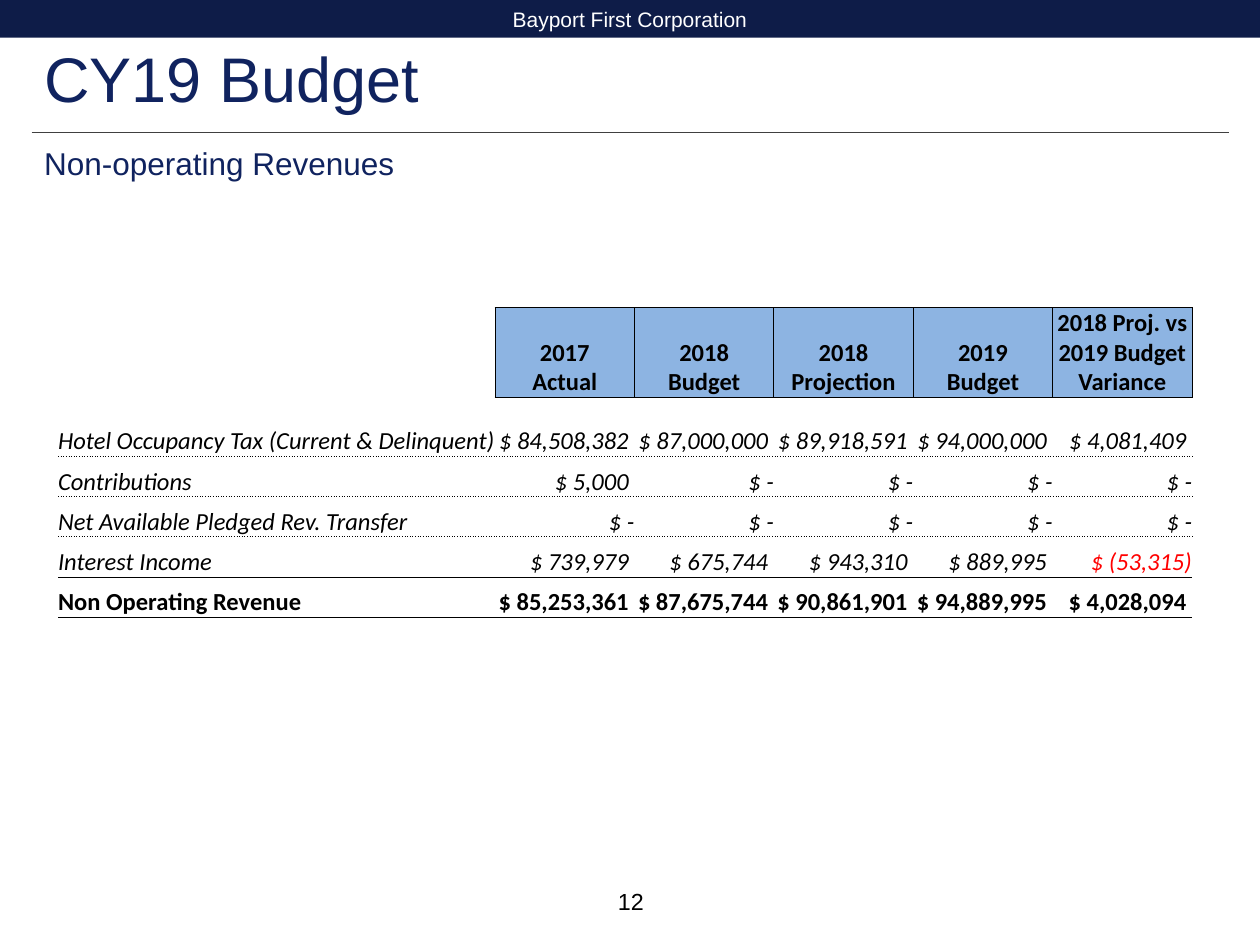
from lxml.etree import SubElement
from pptx import Presentation
from pptx.dml.color import RGBColor
from pptx.enum.shapes import MSO_CONNECTOR as Connector, MSO_SHAPE as Shape
from pptx.enum.text import MSO_ANCHOR as Anchor, MSO_AUTO_SIZE as AutoSize, PP_ALIGN as Align
from pptx.oxml.ns import qn
from pptx.util import Cm, Pt

NAVY, BANNER, BLACK, WHITE = "10235F", "0E1C48", "000000", "FFFFFF"
HEADER_BLUE, RULE_GREY, RED = "8DB4E2", "404040", "FF0000"
NO_STYLE = "{2D5ABB26-0587-4C30-8999-92F81FD0307C}"

HEADERS = ["", "2017\nActual", "2018\nBudget", "2018\nProjection", "2019\nBudget",
           "2018 Proj. vs 2019 Budget Variance"]
REVENUES = [
    ["Hotel Occupancy Tax (Current & Delinquent)", "$ 84,508,382 ", "$ 87,000,000 ",
     "$ 89,918,591 ", "$ 94,000,000 ", "$ 4,081,409 "],
    ["Contributions", "$ 5,000 ", "$ -", "$ -", "$ -", "$ -"],
    ["Net Available Pledged Rev. Transfer", "$ -", "$ -", "$ -", "$ -", "$ -"],
    ["Interest Income", "$ 739,979 ", "$ 675,744 ", "$ 943,310 ", "$ 889,995 ", "$ (53,315)"],
    ["Non Operating Revenue", "$ 85,253,361 ", "$ 87,675,744 ", "$ 90,861,901 ",
     "$ 94,889,995 ", "$ 4,028,094 "],
]
COLUMN_WIDTHS = [8.81] + [2.81] * 5
ROW_HEIGHTS = [1.81, 1.19] + [0.81] * 4


def color(value):
    return RGBColor.from_string(value)


class BudgetSlide:
    """Holds the text style and the current page."""

    font_name = "Arial"
    table_font = "Calibri"

    def __init__(self, deck):
        self.page = deck.slides.add_slide(deck.slide_layouts[5])

    def fill_text(self, frame, text, align=Align.LEFT, ink=BLACK, **font):
        values = {"name": self.font_name, "bold": False, "italic": False, **font}
        for number, line in enumerate(text.split("\n")):
            para = frame.add_paragraph() if number else frame.paragraphs[0]
            para.alignment = align
            span = para.add_run()
            span.text = line
            for key, value in values.items():
                setattr(span.font, key, value)
            span.font.color.rgb = color(ink)

    def place(self, box, left, top, width, height):
        box.left, box.top, box.width, box.height = map(Cm, (left, top, width, height))

    def title(self, text, *area):
        box = self.page.shapes.title
        self.place(box, *area)
        frame = box.text_frame
        frame.auto_size = AutoSize.NONE
        frame.word_wrap = False
        frame.vertical_anchor = Anchor.TOP
        self.fill_text(frame, text, ink=NAVY, size=Pt(36))

    def text(self, text, *area, anchor=Anchor.TOP, **style):
        frame = self.page.shapes.add_textbox(*map(Cm, area)).text_frame
        frame.word_wrap = True
        frame.vertical_anchor = anchor
        self.fill_text(frame, text, **style)

    def banner(self, text, *area):
        box = self.page.shapes.add_shape(Shape.RECTANGLE, *map(Cm, area))
        box.shadow.inherit = False
        box.fill.solid()
        box.fill.fore_color.rgb = color(BANNER)
        box.line.fill.background()
        box.text_frame.vertical_anchor = Anchor.MIDDLE
        self.fill_text(box.text_frame, text, Align.CENTER, WHITE, size=Pt(12))

    def rule(self, *ends):
        line = self.page.shapes.add_connector(Connector.STRAIGHT, *map(Cm, ends))
        line.line.color.rgb = color(RULE_GREY)
        line.line.width = Pt(0.5)
        SubElement(line._element.spPr, qn("a:effectLst"))

    def borders(self, cell, **dashes):
        properties = cell._tc.get_or_add_tcPr()
        for side in "LRTB":
            if side in dashes:
                line = SubElement(properties, qn(f"a:ln{side}"), w=str(Pt(0.5)))
                fill = SubElement(line, qn("a:solidFill"))
                SubElement(fill, qn("a:srgbClr"), val=BLACK)
                SubElement(line, qn("a:prstDash"), val=dashes[side])

    def cell(self, cell, text, align, fill=None, **font):
        cell.vertical_anchor = Anchor.BOTTOM
        for side in ("left", "right", "top", "bottom"):
            setattr(cell, f"margin_{side}", 0)
        if fill:
            cell.fill.solid()
            cell.fill.fore_color.rgb = color(fill)
        else:
            cell.fill.background()
        if text:
            self.fill_text(cell.text_frame, text, align, name=self.table_font,
                           size=Pt(14), **font)

    def table(self, left, top):
        count = len(REVENUES)
        frame = self.page.shapes.add_table(
            count + 1, len(HEADERS), Cm(left), Cm(top),
            Cm(sum(COLUMN_WIDTHS)), Cm(sum(ROW_HEIGHTS)))
        table = frame.table
        table.first_row = table.horz_banding = False
        table._tbl.tblPr.find(qn("a:tableStyleId")).text = NO_STYLE
        for column, width in zip(table.columns, COLUMN_WIDTHS):
            column.width = Cm(width)
        for row, height in zip(table.rows, ROW_HEIGHTS):
            row.height = Cm(height)

        # Header cells are boxed, the corner cell stays empty
        for column, text in enumerate(HEADERS):
            cell = table.cell(0, column)
            self.borders(cell, **(dict.fromkeys("LRTB", "solid") if column else {"R": "solid"}))
            self.cell(cell, text, Align.CENTER, HEADER_BLUE if column else None, bold=True)

        # Dotted lines between the items, solid lines around the total
        for row, values in enumerate(REVENUES, start=1):
            total = row == count
            below = "solid" if row >= count - 1 else "sysDot"
            above = "solid" if row in (1, count) else "sysDot"
            for column, text in enumerate(values):
                cell = table.cell(row, column)
                corner = row == 1 and column == 0
                self.borders(cell, **({"B": below} if corner else {"T": above, "B": below}))
                self.cell(cell, text, Align.RIGHT if column else Align.LEFT,
                          ink=RED if "(" in text and column else BLACK,
                          bold=total, italic=not total)


def main():
    deck = Presentation()
    deck.slide_width, deck.slide_height = Cm(25.4), Cm(19.05)
    slide = BudgetSlide(deck)

    # Heading
    slide.banner("Bayport First Corporation", 0, 0, 25.4, 0.76)
    slide.title("CY19 Budget", 0.64, 0.66, 8.13, 1.8)
    slide.rule(0.64, 2.67, 24.77, 2.67)
    slide.text("Non-operating Revenues", 0.64, 2.77, 24.05, 0.91, ink=NAVY, size=Pt(18))

    # Revenue table and page number
    slide.table(1.17, 6.2)
    slide.text("12", 9.86, 17.65, 5.72, 1.02, anchor=Anchor.MIDDLE,
               align=Align.CENTER, size=Pt(13.3))

    deck.save("out.pptx")


if __name__ == "__main__":
    main()
